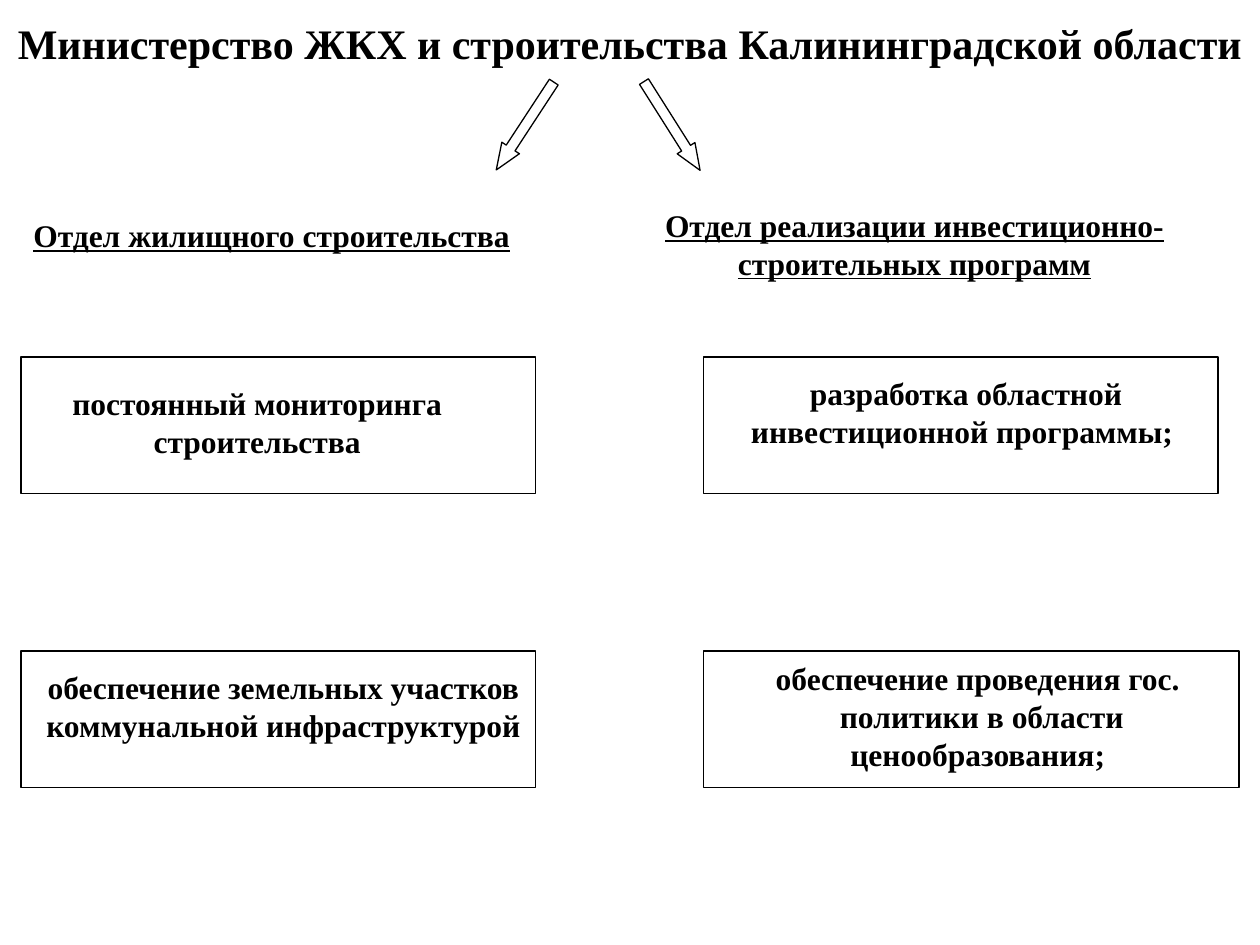
from pptx import Presentation
from pptx import util as u
from pptx.dml.color import RGBColor
from pptx.enum import shapes, text

deck = Presentation()
deck.slide_width, deck.slide_height = u.Inches(10), u.Inches(7.5)
page = deck.slides.add_slide(deck.slide_layouts[5])
CELL = deck.slide_width / 120  # the grid has 120 columns and 90 rows


def cells(*counts):
    return [round(CELL * count) for count in counts]


def add_span(para, words, size=18, font="Times New Roman", bold=True, underline=None):
    span = para.add_run()
    span.text = words
    span.font.name, span.font.size = font, u.Pt(size)
    span.font.bold, span.font.underline = bold, underline
    span.font.color.rgb = RGBColor.from_string("000000")


# Ministry
title = page.shapes.title
title.left, title.top, title.width, title.height = cells(0, 0, 120, 6)
title.text_frame.vertical_anchor = text.MSO_ANCHOR.MIDDLE
title.text_frame.auto_size = text.MSO_AUTO_SIZE.NONE
para = title.text_frame.paragraphs[0]
para.alignment = text.PP_ALIGN.CENTER
add_span(para, "Министерство ЖКХ и строительства Калининградской области", 24)
add_span(para, " ", 40, "Arial", False)

# Frames of the tasks and arrows to the departments
RECT, ARROW = shapes.MSO_SHAPE.RECTANGLE, shapes.MSO_SHAPE.RIGHT_ARROW
outlines = [
    (RECT, (2, 34, 49, 13), 0),
    (RECT, (67, 34, 49, 13), 0),
    (RECT, (2, 62, 49, 13), 0),
    (RECT, (67, 62, 51, 13), 0),
    (ARROW, (45, 11, 10, 2), 123.2),
    (ARROW, (59, 11, 10, 2), 57.7),
]
for kind, place, angle in outlines:
    outline = page.shapes.add_shape(kind, *cells(*place))
    outline.shadow.inherit = False
    outline.fill.background()
    outline.line.color.rgb = RGBColor.from_string("000000")
    outline.line.width = u.Pt(0.75)
    outline.rotation = angle
    if kind == ARROW:
        outline.adjustments[0], outline.adjustments[1] = 0.5, 1.25

# Departments (underlined) and their tasks
LEFT, CENTER = text.PP_ALIGN.LEFT, text.PP_ALIGN.CENTER
TOP, MIDDLE = text.MSO_ANCHOR.TOP, text.MSO_ANCHOR.MIDDLE
labels = [
    ((2, 20, 49, 4.8), LEFT, TOP, True, ["Отдел жилищного строительства"]),
    ((59, 19, 56.2, 8.4), CENTER, MIDDLE, True,
     ["Отдел реализации инвестиционно-строительных программ"]),
    ((4, 36, 41, 8.4), CENTER, MIDDLE, None, ["постоянный мониторинга строительства"]),
    ((67, 35, 50, 8.4), CENTER, MIDDLE, None,
     ["разработка областной инвестиционной программы; "]),
    ((2, 63, 50, 8.4), CENTER, MIDDLE, None,
     ["обеспечение земельных участков коммунальной инфраструктурой"]),
    ((67, 62.2, 53, 12), CENTER, MIDDLE, None,
     ["обеспечение проведения гос. ", "политики в области ценообразования; "]),
]
for place, align, anchor, underline, lines in labels:
    box = page.shapes.add_textbox(*cells(*place))
    frame = box.text_frame
    frame.word_wrap = True
    frame.auto_size = text.MSO_AUTO_SIZE.SHAPE_TO_FIT_TEXT
    frame.vertical_anchor = anchor
    for number, line in enumerate(lines):
        para = frame.add_paragraph() if number else frame.paragraphs[0]
        para.alignment = align
        add_span(para, line, underline=underline)

deck.save("out.pptx")
